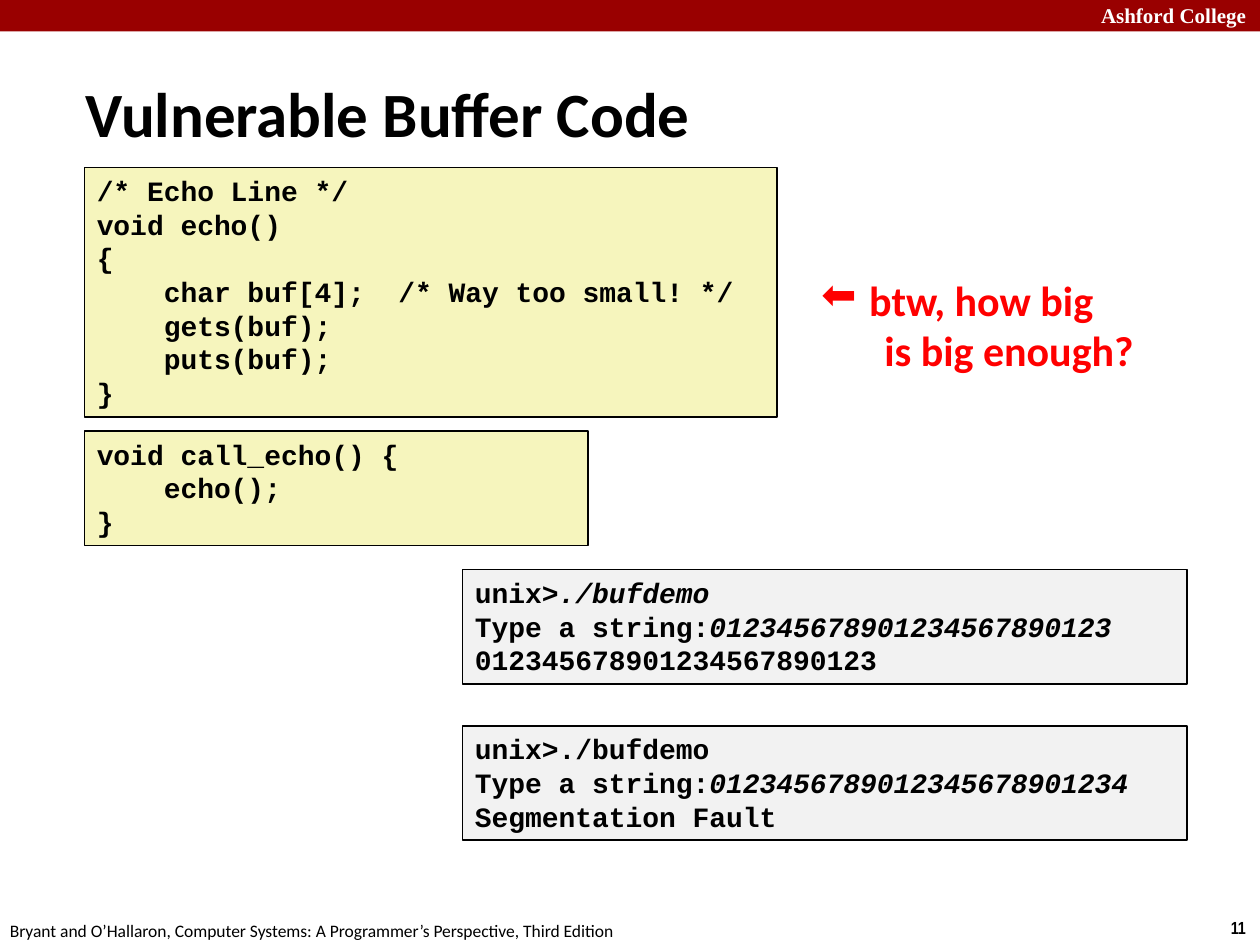
from lxml import etree
from pptx import Presentation
from pptx.dml.color import RGBColor
from pptx.enum.shapes import MSO_SHAPE
from pptx.enum.text import MSO_ANCHOR, MSO_AUTO_SIZE, PP_ALIGN
from pptx.oxml.ns import qn
from pptx.util import Inches, Pt

RECTANGLE = MSO_SHAPE.RECTANGLE
LEFT = PP_ALIGN.LEFT
TOP, MIDDLE = MSO_ANCHOR.TOP, MSO_ANCHOR.MIDDLE
NO_FIT, GROW = MSO_AUTO_SIZE.NONE, MSO_AUTO_SIZE.SHAPE_TO_FIT_TEXT

COLORS = {
    "banner": "990000",
    "code": "F6F5BD",
    "terminal": "F2F2F2",
    "black": "000000",
    "white": "FFFFFF",
    "red": "FF0000",
}
TITLE_FONT = {"name": "Calibri", "size": Pt(36), "bold": True}
CODE_FONT = {"name": "Courier New", "size": Pt(16), "bold": True}
REMARK_FONT = {"name": "Calibri", "size": Pt(24), "bold": True}
BANNER_FONT = {"name": "Times New Roman", "size": Pt(12), "bold": True}
NUMBER_FONT = {"name": "Arial Narrow", "size": Pt(10), "bold": True}
CREDIT_FONT = {"name": "Calibri", "size": Pt(10), "bold": False}

ECHO_CODE = """/* Echo Line */
void echo()
{
    char buf[4];  /* Way too small! */
    gets(buf);
    puts(buf);
}"""
CALL_CODE = """void call_echo() {
    echo();
}"""
GOOD_RUN = [
    ("unix>", "./bufdemo"),
    ("Type a string:", "012345678901234567890123"),
    ("012345678901234567890123",),
]
BAD_RUN = [
    ("unix>./bufdemo",),
    ("Type a string:", "0123456789012345678901234"),
    ("Segmentation Fault",),
]


def plain_lines(text):
    """Split text into lines of one upright run each."""
    return [(line,) for line in text.split("\n")]


def write_lines(frame, lines, font_format, color="black"):
    """Write one paragraph a line; the second run of a line is typed input in italics."""
    for index, line in enumerate(lines):
        paragraph = frame.paragraphs[0] if index == 0 else frame.add_paragraph()
        paragraph.alignment = LEFT
        for position, text in enumerate(line):
            run = paragraph.add_run()
            run.text = text
            for name, value in font_format.items():
                setattr(run.font, name, value)
            run.font.italic = position == 1
            run.font.color.rgb = RGBColor.from_string(COLORS[color])


def set_hanging_indent(paragraph, inches, bullet=None):
    """Hang the first line of a paragraph, with a bullet if one is given."""
    properties = paragraph._p.get_or_add_pPr()
    properties.set("marL", str(Inches(inches)))
    properties.set("indent", str(-Inches(inches)))
    if bullet:
        etree.SubElement(properties, qn("a:buChar")).set("char", bullet)


def add_rectangle(slide, box, color):
    """Add a flat filled rectangle without an outline."""
    shape = slide.shapes.add_shape(RECTANGLE, *map(Inches, box))
    shape.shadow.inherit = False
    shape.fill.solid()
    shape.fill.fore_color.rgb = RGBColor.from_string(COLORS[color])
    shape.line.fill.background()
    return shape


def add_listing(slide, box, color, lines):
    """Add an outlined panel of monospaced text."""
    shape = add_rectangle(slide, box, color)
    shape.line.color.rgb = RGBColor.from_string(COLORS["black"])
    shape.line.width = Pt(1)
    frame = shape.text_frame
    frame.word_wrap = True
    frame.auto_size = GROW
    frame.vertical_anchor = TOP
    write_lines(frame, lines, CODE_FONT)


def add_label(slide, box, text, font_format, color="black", wrap=False):
    """Add a text box and return its text frame."""
    frame = slide.shapes.add_textbox(*map(Inches, box)).text_frame
    frame.word_wrap = wrap
    frame.auto_size = GROW
    write_lines(frame, plain_lines(text), font_format, color)
    return frame


def add_title(slide, box, text):
    """Place and format the title placeholder."""
    title = slide.shapes.title
    title.left, title.top, title.width, title.height = map(Inches, box)
    frame = title.text_frame
    frame.auto_size = NO_FIT
    frame.vertical_anchor = MIDDLE
    write_lines(frame, plain_lines(text), TITLE_FONT)
    set_hanging_indent(frame.paragraphs[0], 0.13)


def main():
    """Build the slide and save it."""
    presentation = Presentation()
    presentation.slide_width = Inches(10)
    presentation.slide_height = Inches(7.5)
    slide = presentation.slides.add_slide(presentation.slide_layouts[5])

    add_rectangle(slide, (0, 0, 10, 0.25), "banner")
    add_label(slide, (8.64, -0.03, 1.43, 0.3), "Ashford College", BANNER_FONT, "white", True)
    add_label(slide, (9.67, 7.23, 0.34, 0.27), "11", NUMBER_FONT)
    add_label(
        slide,
        (-0.02, 7.25, 5.08, 0.27),
        "Bryant and O’Hallaron, Computer Systems: A Programmer’s Perspective, Third Edition",
        CREDIT_FONT,
    )
    add_title(slide, (0.58, 0.58, 7.01, 0.63), "Vulnerable Buffer Code")

    add_listing(slide, (0.67, 1.33, 5.5, 1.98), "code", plain_lines(ECHO_CODE))
    add_listing(slide, (0.67, 3.42, 4, 0.91), "code", plain_lines(CALL_CODE))
    for top, lines in ((4.52, GOOD_RUN), (5.76, BAD_RUN)):
        add_listing(slide, (3.67, top, 5.75, 0.91), "terminal", lines)

    remark = add_label(
        slide, (6.42, 2.13, 3.21, 0.91), "btw, how big\n\tis big enough?", REMARK_FONT, "red"
    )
    set_hanging_indent(remark.paragraphs[0], 0.38, "⬅")

    presentation.save("out.pptx")


if __name__ == "__main__":
    main()
